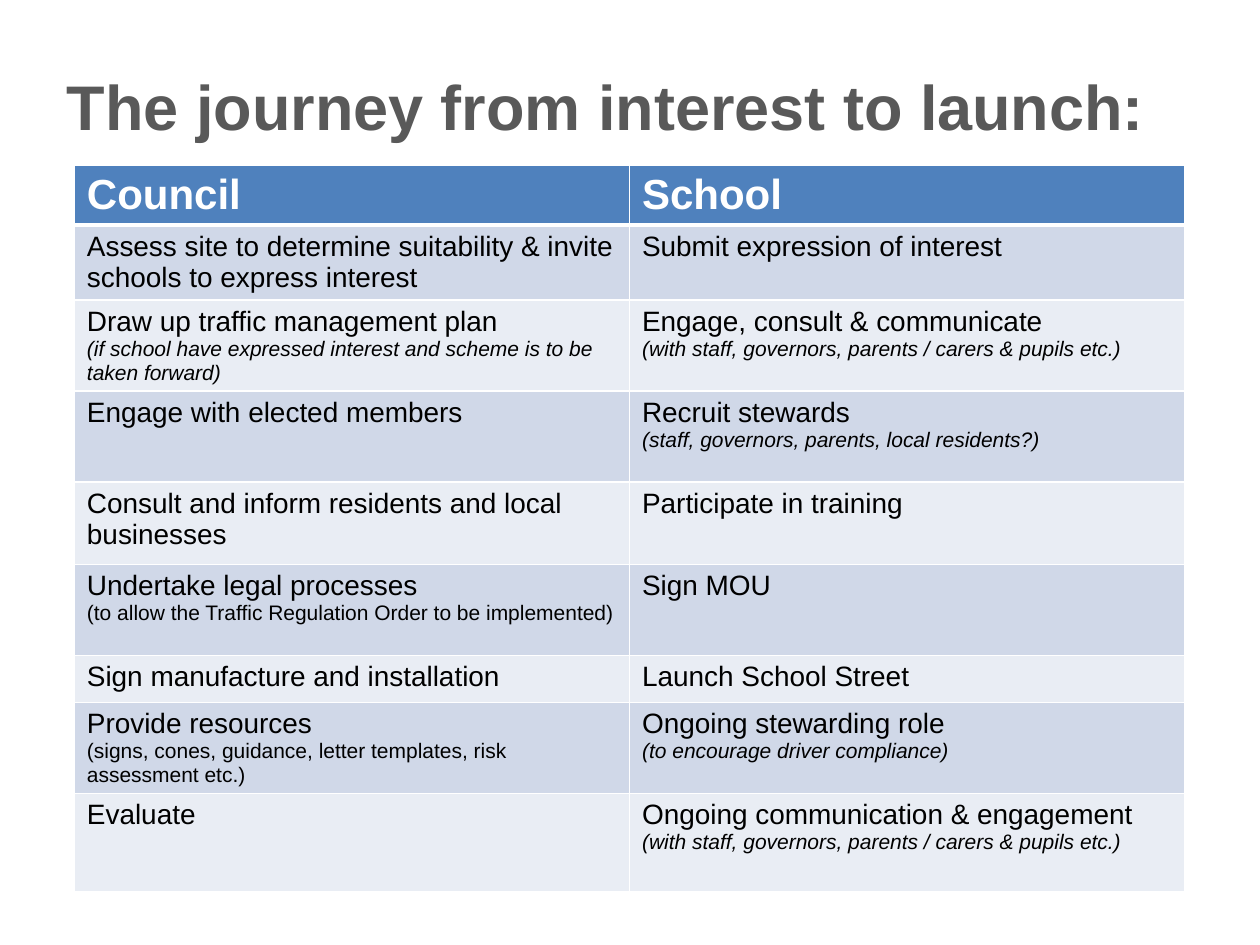
from lxml.etree import SubElement
from pptx import Presentation
from pptx.dml.color import RGBColor
from pptx.enum.text import MSO_ANCHOR, PP_ALIGN
from pptx.oxml.ns import qn
from pptx.util import Pt

HEAD = {"name": "Arial", "size": Pt(24), "bold": True, "italic": False}
BODY = {**HEAD, "size": Pt(16), "bold": False}
NOTE = {**BODY, "size": Pt(12)}
SLANT = {**NOTE, "italic": True}
TITLE = {**HEAD, "size": Pt(36)}

STAFF = ("(with staff, governors, parents / carers & pupils etc.)", SLANT)
STEPS = [
    (33, [("Council", HEAD)], [("School", HEAD)]),
    (43, [("Assess site to determine suitability & invite schools to express interest", BODY)],
     [("Submit expression of interest", BODY)]),
    (52, [("Draw up traffic management plan", BODY),
          ("(if school have expressed interest and scheme is to be taken forward)", SLANT)],
     [("Engage, consult & communicate", BODY), STAFF]),
    (52, [("Engage with elected members", BODY)],
     [("Recruit stewards", BODY),
      ("(staff, governors, parents, local residents?)", SLANT)]),
    (47, [("Consult and inform residents and local businesses", BODY)],
     [("Participate in training", BODY)]),
    (52, [("Undertake legal processes", BODY),
          ("(to allow the Traffic Regulation Order to be implemented)", NOTE)],
     [("Sign MOU", BODY)]),
    (27, [("Sign manufacture and installation", BODY)],
     [("Launch School Street", BODY)]),
    (52, [("Provide resources", BODY),
          ("(signs, cones, guidance, letter templates, risk assessment etc.)", NOTE)],
     [("Ongoing stewarding role", BODY),
      ("(to encourage driver compliance)", SLANT)]),
    (56, [("Evaluate", BODY)],
     [("Ongoing communication & engagement", BODY), STAFF]),
]


def tint(text):
    """Turn a hex string into a colour."""
    return RGBColor.from_string(text)


def style(font, look, ink):
    """Set the font's values and colour."""
    for key, value in look.items():
        setattr(font, key, value)
    font.color.rgb = tint(ink)


def write(frame, lines, ink):
    """Fill a text frame with one paragraph per line."""
    for i, (text, look) in enumerate(lines):
        para = frame.add_paragraph() if i else frame.paragraphs[0]
        run = para.add_run()
        run.text = text
        style(run.font, look, ink)


def edge(cell, side, width):
    """Draw one white border of a cell."""
    line = SubElement(cell._tc.get_or_add_tcPr(), qn(f"a:ln{side}"), w=str(Pt(width)))
    fill = SubElement(line, qn("a:solidFill"))
    SubElement(fill, qn("a:srgbClr"), val="FFFFFF")


def dress(cell, row):
    """Give a cell its borders and its row's band colour."""
    thick = {(0, "B"), (1, "T")}
    for side in "LRTB":
        edge(cell, side, 3 if (row, side) in thick else 1)
    cell.fill.solid()
    band = "D0D8E8" if row % 2 else "E9EDF4"
    cell.fill.fore_color.rgb = tint(band if row else "4F81BD")


def add_title(slide, text):
    """Place and format the slide title."""
    title = slide.shapes.title
    place = {"left": Pt(31), "top": Pt(15), "width": Pt(663), "height": Pt(90)}
    for key, value in place.items():
        setattr(title, key, value)
    frame = title.text_frame
    frame.word_wrap = True
    frame.vertical_anchor = MSO_ANCHOR.MIDDLE
    write(frame, [(text, TITLE)], "595959")
    frame.paragraphs[0].alignment = PP_ALIGN.LEFT


def add_steps(slide):
    """Add the table of council and school steps."""
    high = sum(step[0] for step in STEPS)
    table = slide.shapes.add_table(
        len(STEPS), 2, Pt(42.5), Pt(94.5), Pt(634.5), Pt(high)).table
    for row, (tall, *pair) in enumerate(STEPS):
        table.rows[row].height = Pt(tall)
        for col, lines in enumerate(pair):
            cell = table.cell(row, col)
            dress(cell, row)
            write(cell.text_frame, lines, "000000" if row else "FFFFFF")


def main():
    """Build and save the slide."""
    deck = Presentation()
    deck.slide_width, deck.slide_height = Pt(720), Pt(540)
    slide = deck.slides.add_slide(deck.slide_layouts[5])
    add_title(slide, "The journey from interest to launch:")
    add_steps(slide)
    deck.save("out.pptx")


if __name__ == "__main__":
    main()
